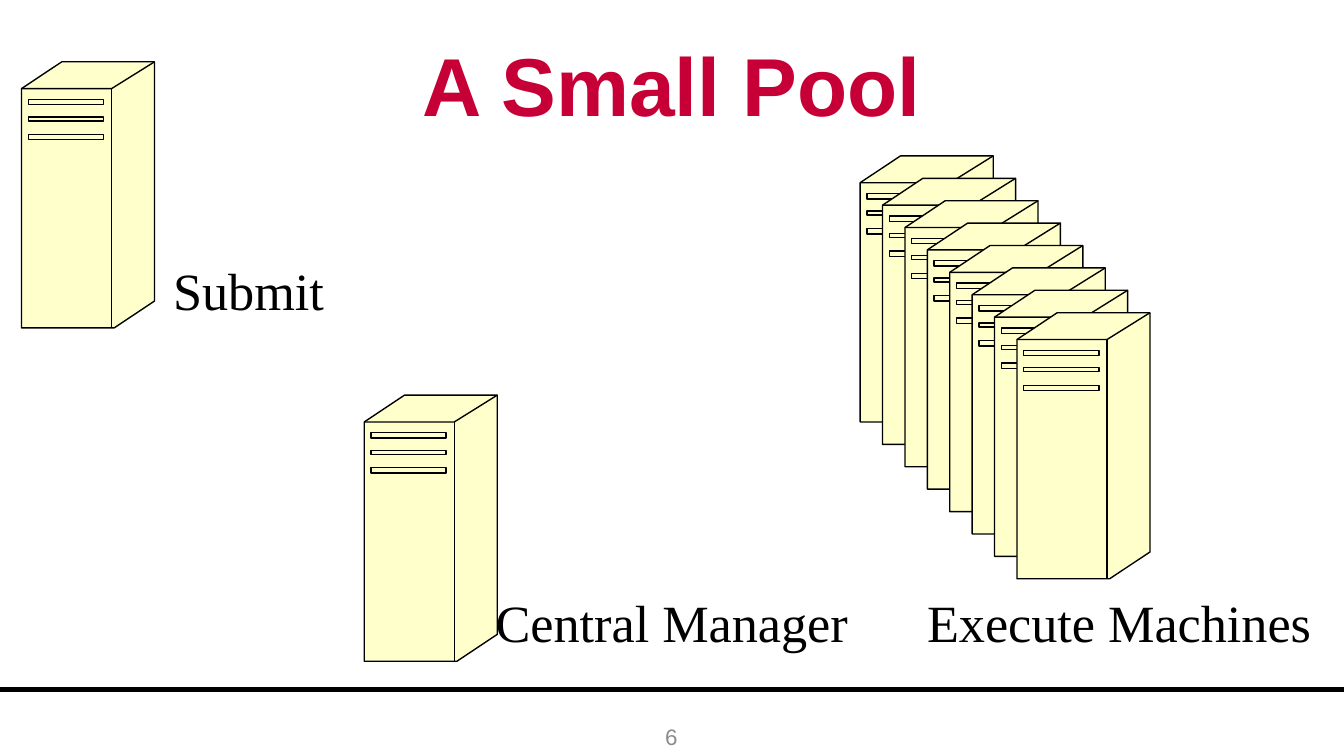
import copy

import pptx
import pptx.dml.color
import pptx.enum.shapes
import pptx.enum.text
import pptx.util
from lxml import etree

Inches = pptx.util.Inches
Pt = pptx.util.Pt
Color = pptx.dml.color.RGBColor
Align = pptx.enum.text.PP_ALIGN
Anchor = pptx.enum.text.MSO_ANCHOR

RED = Color(0xC6, 0x00, 0x36)
GRAY = Color(0x8C, 0x8C, 0x8C)
BLACK = Color(0, 0, 0)
CREAM = Color(0xFF, 0xFF, 0xCC)

UNIT = Inches(0.01)
BODY = [(0, 20), (30, 0), (99, 0), (99, 178), (69, 198), (0, 198)]
EDGES = [[(0, 20), (67, 20), (99, 0)], [(67, 20), (67, 198)]]
SLOTS = [(27.5, 32), (41, 44), (54, 57.5)]


def write(frame, text, size=28, font="Times New Roman", color=BLACK,
          bold=False, align=Align.LEFT, anchor=Anchor.TOP):
    frame.word_wrap = True
    frame.vertical_anchor = anchor
    para = frame.paragraphs[0]
    para.alignment = align
    run = para.add_run()
    run.text = text
    run.font.size = Pt(size)
    run.font.name = font
    run.font.bold = bold
    run.font.color.rgb = color


class Board:
    """Draws a pool of servers on one slide in a shared style."""

    def __init__(self, slide):
        self.shapes = slide.shapes
        self.fill = CREAM
        self.line = BLACK

    def label(self, text, left, top, width, height, **style):
        box = self.shapes.add_textbox(
            Inches(left), Inches(top), Inches(width), Inches(height))
        write(box.text_frame, text, **style)

    def rule(self, top, width):
        line = self.shapes.add_connector(
            pptx.enum.shapes.MSO_CONNECTOR.STRAIGHT,
            0, Inches(top), Inches(width), Inches(top))
        line.line.color.rgb = self.line
        line.line.width = Pt(2.25)
        props = line._element.spPr
        etree.SubElement(props, pptx.oxml.ns.qn("a:effectLst"))

    def server(self, left, top):
        pen = self.shapes.build_freeform(*BODY[0], scale=UNIT)
        pen.add_line_segments(BODY[1:], close=True)
        slots = [[(5, a), (61, a), (61, b), (5, b), (5, a)] for a, b in SLOTS]
        for start, *rest in EDGES + slots:
            pen.move_to(*start)
            pen.add_line_segments(rest, close=False)
        shape = pen.convert_to_shape(Inches(left), Inches(top))
        shape.shadow.inherit = False
        shape.fill.solid()
        shape.fill.fore_color.rgb = self.fill
        shape.line.color.rgb = self.line
        shape.line.width = Pt(0.75)
        self.split(shape, len(BODY) + 1)

    def split(self, shape, count):
        body = shape._element.xpath(".//a:path")[0]
        trim = copy.deepcopy(body)
        del body[count:]
        del trim[:count]
        trim.set("fill", "none")
        body.addnext(trim)


def main():
    deck = pptx.Presentation()
    deck.slide_width = Inches(10)
    deck.slide_height = deck.slide_width * 9 // 16
    board = Board(deck.slides.add_slide(deck.slide_layouts[6]))
    board.rule(5.13, 10)
    board.label("A Small Pool", 0, 0.25, 10, 0.75, size=44, font="Arial",
                color=RED, bold=True, align=Align.CENTER, anchor=Anchor.MIDDLE)
    board.label("6", 3.83, 5.33, 2.33, 0.3, size=12, font="Arial",
                color=GRAY, align=Align.CENTER, anchor=Anchor.MIDDLE)
    board.server(0.16, 0.46)
    board.label("Submit", 1.19, 1.87, 3.04, 0.57)
    board.server(2.71, 2.94)
    board.label("Central Manager", 3.59, 4.34, 3.04, 0.57)
    for step in range(8):
        board.server(6.4 + step / 6, 1.16 + step / 6)
    board.label("Execute Machines", 6.8, 4.34, 3.42, 0.57)
    deck.save("out.pptx")


if __name__ == "__main__":
    main()
